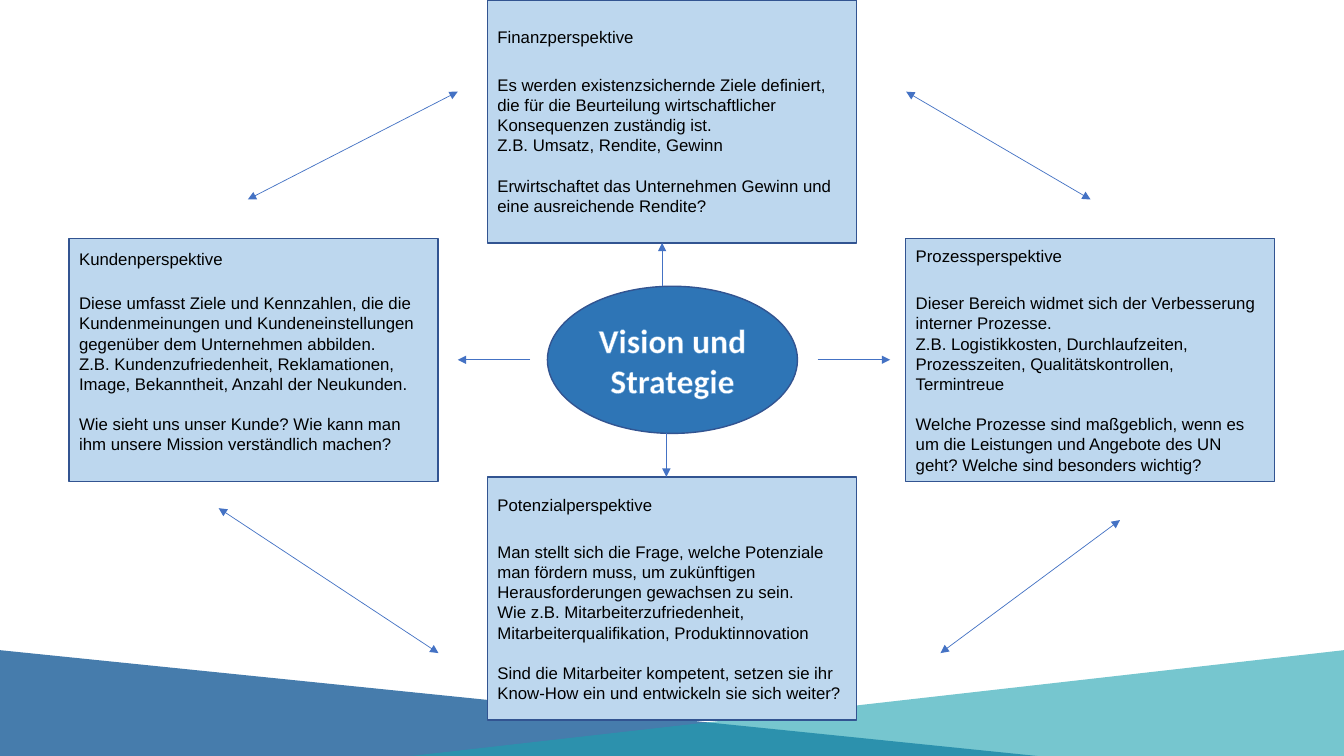
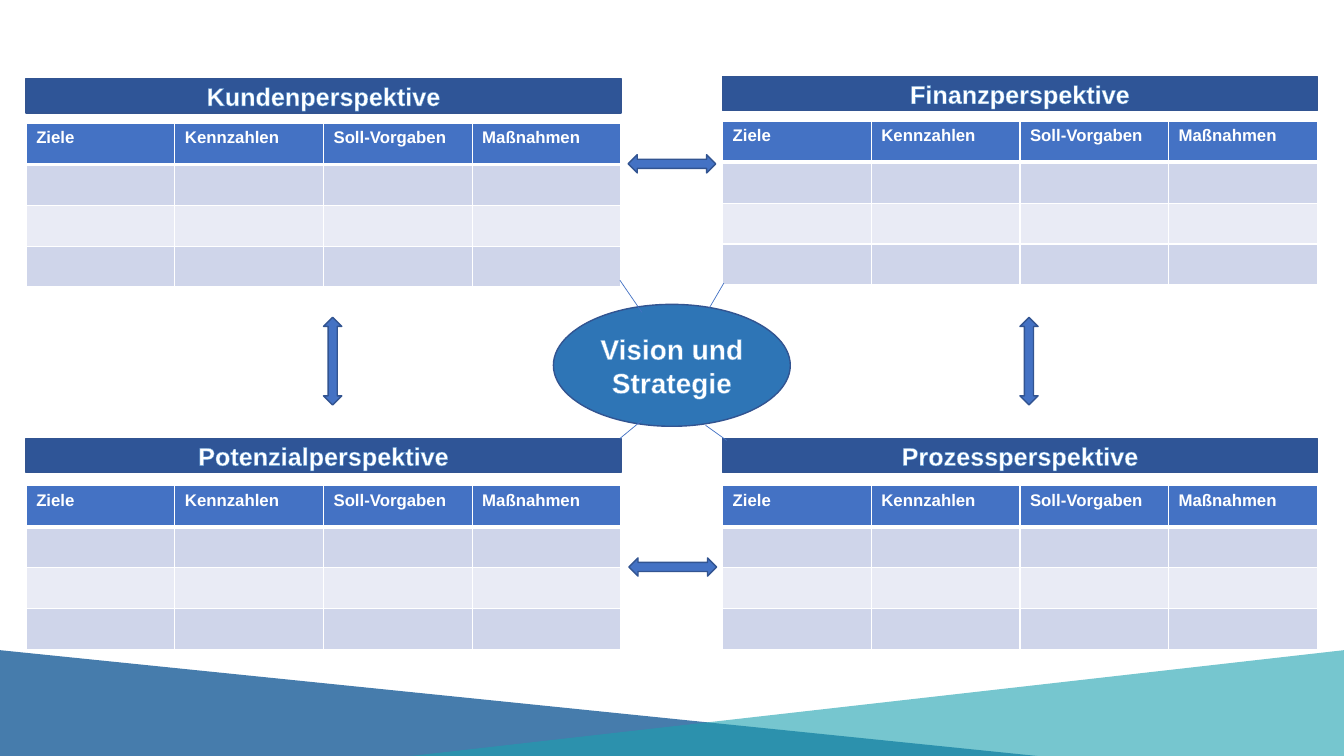
from lxml.etree import SubElement
from pptx import Presentation
from pptx.dml.color import RGBColor
from pptx.enum.shapes import MSO_CONNECTOR, MSO_SHAPE
from pptx.enum.text import MSO_ANCHOR, PP_ALIGN
from pptx.oxml import parse_xml
from pptx.oxml.ns import nsdecls, qn
from pptx.util import Pt

COLORS = {
    "white": "FFFFFF", "black": "000000", "edge": "325491", "vision": "2E75B6",
    "card": "BDD7EE", "accent": "4472C4", "title": "2F5597", "glow": "5B9BD5",
    "odd": "CFD5EA", "even": "E9EBF5", "band_left": "095191", "band_right": "1BA0AF",
}
WIDTH, HEIGHT = 960, 540
BANDS = [
    ("band_left", 75, [(0, 464.4), (741, HEIGHT), (0, HEIGHT)]),
    ("band_right", 60, [(WIDTH, 464.4), (WIDTH, HEIGHT), (293.5, HEIGHT)]),
]

CARD_W, CARD_H = 263.5, 173.5
CARD_STEP_X, CARD_STEP_Y = 298.8, 170.4
PERSPECTIVES = [
    (0, 1, "Kundenperspektive", 14, 17, 12, [
        "Diese umfasst Ziele und Kennzahlen, die die Kundenmeinungen und "
        "Kundeneinstellungen gegenüber dem Unternehmen abbilden.",
        "Z.B. Kundenzufriedenheit, Reklamationen, Image, Bekanntheit, Anzahl der Neukunden.",
        "Wie sieht uns unser Kunde? Wie kann man ihm unsere Mission verständlich machen?"]),
    (1, 2, "Potenzialperspektive", 14, 19.5, 0, [
        "Man stellt sich die Frage, welche Potenziale man fördern muss, um zukünftigen "
        "Herausforderungen gewachsen zu sein.",
        "Wie z.B. Mitarbeiterzufriedenheit, Mitarbeiterqualifikation, Produktinnovation",
        "Sind die Mitarbeiter kompetent, setzen sie ihr Know-How ein und entwickeln "
        "sie sich weiter?"]),
    (1, 0, "Finanzperspektive", 14, 19.5, 0, [
        "Es werden existenzsichernde Ziele definiert, die für die Beurteilung "
        "wirtschaftlicher Konsequenzen zuständig ist.",
        "Z.B. Umsatz, Rendite, Gewinn",
        "Erwirtschaftet das Unternehmen Gewinn und eine ausreichende Rendite?"]),
    (2, 1, "Prozessperspektive", 16, 19.5, 0, [
        "Dieser Bereich widmet sich der Verbesserung interner Prozesse.",
        "Z.B. Logistikkosten, Durchlaufzeiten, Prozesszeiten, Qualitätskontrollen, Termintreue",
        "Welche Prozesse sind maßgeblich, wenn es um die Leistungen und Angebote des UN "
        "geht? Welche sind besonders wichtig?"]),
]
CYCLE_ARROWS = [
    (177, 142.5, 327, 65.5), (647.3, 65.5, 779, 142.5),
    (156.2, 363, 313.2, 466.5), (671.8, 466.5, 800, 371.5),
]
VISION_ARROWS = [
    (378.7, 257, 327, 257), (473, 204.5, 473, 173.5),
    (476, 309.6, 476, 340.6), (584, 257, 635.8, 257),
]

TABLE_W, TITLE_H, ROW_H = 424.8, 24.5, 29.2
COLUMNS = ["Ziele", "Kennzahlen", "Soll-Vorgaben", "Maßnahmen"]
SCORECARDS = [
    ("Kundenperspektive", 18.7, 56.2, 32), ("Finanzperspektive", 516.2, 54.7, 32),
    ("Potenzialperspektive", 18.7, 313.2, 33.8), ("Prozessperspektive", 516.2, 313.2, 33.8),
]
ARROW_LENGTH, ARROW_WIDTH = 62.6, 13
EXCHANGES = [
    (MSO_SHAPE.UP_DOWN_ARROW, 237.6, 258), (MSO_SHAPE.UP_DOWN_ARROW, 735, 258),
    (MSO_SHAPE.LEFT_RIGHT_ARROW, 480.6, 405), (MSO_SHAPE.LEFT_RIGHT_ARROW, 480, 117),
]
SPOKES = [
    (458.6, 223.2, 442.8, 200.2), (517, 202.3, 506.9, 219.6),
    (442.8, 313.2, 458.6, 300.2), (519.1, 314.6, 504, 303.8),
]


def color(name):
    """Return the named palette colour."""
    return RGBColor.from_string(COLORS[name])


def style_font(font, size, name="Arial", ink="white", bold=False):
    """Set the look of a font."""
    font.size, font.name, font.bold = Pt(size), name, bold
    font.color.rgb = color(ink)


def add_panel(slide, kind, box, fill):
    """Add a filled preset shape with the shared thin edge."""
    panel = slide.shapes.add_shape(kind, *[Pt(length) for length in box])
    panel.shadow.inherit = False
    panel.fill.solid()
    panel.fill.fore_color.rgb = color(fill)
    panel.line.color.rgb = color("edge")
    panel.line.width = Pt(1)
    return panel


def add_label(slide, kind, box, fill, text, size, font_name="Arial"):
    """Add a panel with bold, centred, outlined white text."""
    label = add_panel(slide, kind, box, fill)
    frame = label.text_frame
    frame.margin_top = frame.margin_bottom = 0
    frame.vertical_anchor = MSO_ANCHOR.MIDDLE
    frame.text = text
    for paragraph in frame.paragraphs:
        paragraph.alignment = PP_ALIGN.CENTER
        for run in paragraph.runs:
            style_font(run.font, size, font_name, bold=True)
            run.font._element.insert(0, parse_xml(
                f'<a:ln {nsdecls("a")} w="10160"><a:solidFill>'
                f'<a:srgbClr val="{COLORS["glow"]}"/></a:solidFill></a:ln>'))


def add_line(slide, ends, head=False, tail=False):
    """Add a thin line with optional arrowheads."""
    line = slide.shapes.add_connector(MSO_CONNECTOR.STRAIGHT, *[Pt(end) for end in ends])
    line.line.color.rgb = color("accent")
    line.line.width = Pt(0.5)
    outline = line.line._get_or_add_ln()
    for tag, wanted in (("a:headEnd", head), ("a:tailEnd", tail)):
        if wanted:
            SubElement(outline, qn(tag), type="triangle")
    SubElement(line._element.spPr, qn("a:effectLst"))


def add_bands(slide):
    """Add the two translucent bands along the foot of the slide."""
    for name, opacity, corners in BANDS:
        start, *rest = [(Pt(x), Pt(y)) for x, y in corners]
        builder = slide.shapes.build_freeform(*start)
        builder.add_line_segments(rest)
        band = builder.convert_to_shape()
        band.shadow.inherit = False
        band.fill.solid()
        band.fill.fore_color.rgb = color(name)
        band.line.fill.background()
        tint = band._element.spPr.find(qn("a:solidFill"))[0]
        SubElement(tint, qn("a:alpha"), val=str(opacity * 1000))


def add_card(slide, left, top, heading, heading_size, gap, lift, texts):
    """Add a perspective card with heading, description and key question."""
    card = add_panel(slide, MSO_SHAPE.RECTANGLE, (left, top, CARD_W, CARD_H), "card")
    frame = card.text_frame
    frame.word_wrap = True
    frame.vertical_anchor = MSO_ANCHOR.MIDDLE
    frame.margin_bottom = Pt(3.6 + lift)
    frame.text = "\n".join([heading, *texts])
    title, description, example, question = frame.paragraphs
    for paragraph in frame.paragraphs:
        paragraph.alignment = PP_ALIGN.LEFT
        style_font(paragraph.runs[0].font, heading_size if paragraph is title else 12,
                   ink="black", bold=paragraph is question)
    description.space_before = Pt(gap)
    question.space_before = Pt(14.4)


def set_cell(cell, fill, bottom):
    """Fill a table cell and give it white borders."""
    properties = cell._tc.get_or_add_tcPr()
    for side, width in (("L", 1), ("R", 1), ("T", 1), ("B", bottom)):
        border = SubElement(properties, qn(f"a:ln{side}"), w=str(Pt(width)))
        paint = SubElement(border, qn("a:solidFill"))
        SubElement(paint, qn("a:srgbClr"), val=COLORS["white"])
    cell.fill.solid()
    cell.fill.fore_color.rgb = color(fill)


def add_scorecard(slide, title, left, top, table_offset):
    """Add a title bar with its scorecard table below."""
    fills = ["accent", "odd", "even", "odd"]
    table = slide.shapes.add_table(
        len(fills), len(COLUMNS), Pt(left), Pt(top + table_offset),
        Pt(TABLE_W), Pt(ROW_H * len(fills))).table
    for row, fill in enumerate(fills):
        for column, heading in enumerate(COLUMNS):
            cell = table.cell(row, column)
            set_cell(cell, fill, 1 if row else 3)
            if row == 0:
                cell.text_frame.text = heading
                style_font(cell.text_frame.paragraphs[0].runs[0].font, 12, bold=True)
    add_label(slide, MSO_SHAPE.RECTANGLE, (left, top, TABLE_W, TITLE_H), "title", title, 18)


def add_exchange(slide, kind, center_x, center_y):
    """Add a block arrow centred on a point."""
    width, height = ARROW_WIDTH, ARROW_LENGTH
    if kind == MSO_SHAPE.LEFT_RIGHT_ARROW:
        width, height = height, width
    add_panel(slide, kind, (center_x - width / 2, center_y - height / 2, width, height), "accent")


def build_overview(slide):
    """Build the slide with four perspectives around the vision."""
    add_bands(slide)
    add_label(slide, MSO_SHAPE.OVAL, (391, 204.5, 178.6, 105.1), "vision",
              "Vision und\nStrategie", 24, "Calibri")
    left = (WIDTH - CARD_W) / 2 - CARD_STEP_X
    for column, row, *content in PERSPECTIVES:
        add_card(slide, left + column * CARD_STEP_X, row * CARD_STEP_Y, *content)
    for ends in CYCLE_ARROWS:
        add_line(slide, ends, head=True, tail=True)
    for ends in VISION_ARROWS:
        add_line(slide, ends, tail=True)


def build_scorecards(slide):
    """Build the slide with four scorecards around the vision."""
    add_bands(slide)
    for scorecard in SCORECARDS:
        add_scorecard(slide, *scorecard)
    add_label(slide, MSO_SHAPE.OVAL, (395.3, 217.4, 169.2, 87.1), "vision",
              "Vision und\nStrategie", 20)
    for exchange in EXCHANGES:
        add_exchange(slide, *exchange)
    for ends in SPOKES:
        add_line(slide, ends)


def main():
    """Build and save the presentation."""
    deck = Presentation()
    deck.slide_width, deck.slide_height = Pt(WIDTH), Pt(HEIGHT)
    for build in (build_overview, build_scorecards):
        build(deck.slides.add_slide(deck.slide_layouts[6]))
    deck.save("out.pptx")


if __name__ == "__main__":
    main()
